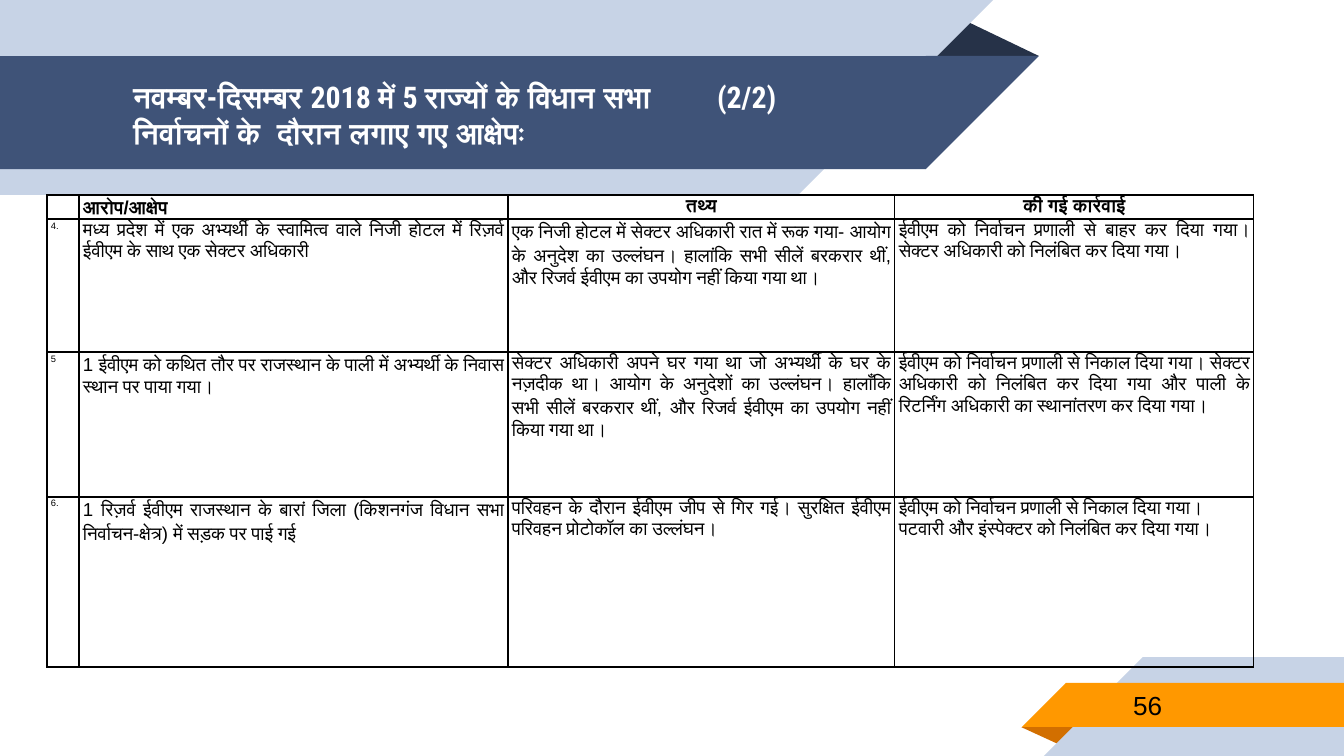
from lxml.etree import SubElement
from pptx import Presentation
from pptx.dml.color import RGBColor
from pptx.enum.shapes import MSO_SHAPE
from pptx.enum.text import MSO_ANCHOR, MSO_AUTO_SIZE, PP_ALIGN
from pptx.oxml.ns import qn
from pptx.util import Pt

SCALE = 914400 / 134.4
PALE, NAVY, SHADE = "C7D3E6", "3F5378", "263248"
ORANGE, RUST = "FF9800", "D26F00"
RECT, CORNER, FOLD = MSO_SHAPE.RECTANGLE, MSO_SHAPE.RIGHT_TRIANGLE, MSO_SHAPE.ISOSCELES_TRIANGLE
LEFT, CENTER, JUSTIFY = PP_ALIGN.LEFT, PP_ALIGN.CENTER, PP_ALIGN.JUSTIFY

TITLE = ("नवम्बर-दिसम्बर 2018 में 5 राज्यों के विधान सभा\t(2/2)\v"
         "निर्वाचनों के  दौरान लगाए गए आक्षेपः")
COLUMNS = [32, 429, 387, 359]
HEIGHTS = [24, 133, 145, 170]
ROWS = [
    ["", "आरोप/आक्षेप", "तथ्य", "की गई कार्रवाई"],
    ["4.",
     "मध्य प्रदेश में एक अभ्यर्थी के स्वामित्व वाले निजी होटल में रिज़र्व ईवीएम के साथ एक सेक्टर अधिकारी",
     "एक निजी होटल में सेक्टर अधिकारी रात में रूक गया- आयोग के अनुदेश का उल्लंघन। "
     "हालांकि सभी सीलें बरकरार थीं, और रिजर्व ईवीएम का उपयोग नहीं किया गया था।",
     "ईवीएम को निर्वाचन प्रणाली से बाहर कर दिया गया। सेक्टर अधिकारी को निलंबित कर दिया गया।"],
    ["5",
     "1 ईवीएम को कथित तौर पर राजस्थान के पाली में अभ्यर्थी के निवास स्थान पर पाया गया।",
     "सेक्टर अधिकारी अपने घर गया था जो अभ्यर्थी के घर के नज़दीक था। आयोग के अनुदेशों का उल्लंघन। "
     "हालाँकि सभी सीलें बरकरार थीं, और रिजर्व ईवीएम का उपयोग नहीं किया गया था।",
     "ईवीएम को निर्वाचन प्रणाली से निकाल दिया गया। सेक्टर अधिकारी को निलंबित कर दिया गया "
     "और पाली के रिटर्निंग अधिकारी का स्थानांतरण कर दिया गया।"],
    ["6.",
     "1 रिज़र्व ईवीएम राजस्थान के बारां जिला (किशनगंज विधान सभा निर्वाचन-क्षेत्र) में सड़क पर पाई गई",
     "परिवहन के दौरान ईवीएम जीप से गिर गई। सुरक्षित ईवीएम परिवहन प्रोटोकॉल का उल्लंघन।",
     "ईवीएम को निर्वाचन प्रणाली से निकाल दिया गया। पटवारी और इंस्पेक्टर को निलंबित कर दिया गया।"],
]
ALIGNS = [[LEFT, LEFT, CENTER, CENTER]] + [[LEFT, JUSTIFY, JUSTIFY, JUSTIFY]] * 2 + [
    [LEFT, JUSTIFY, JUSTIFY, LEFT]]


def px(n):
    """Turn pixels into EMU."""
    return round(n * SCALE)


def color(value):
    """Turn a hex string into a colour."""
    return RGBColor.from_string(value)


def apply(target, values):
    """Set every attribute named in values on target."""
    for name, value in values.items():
        setattr(target, name, value)


class Deck:
    """Hold the style and the current slide."""

    BODY = {"name": "Arial", "size": Pt(10), "bold": False}
    HEAD = {"name": "Roboto Condensed", "size": Pt(16), "bold": True}
    FRAME = {"word_wrap": True, "auto_size": MSO_AUTO_SIZE.NONE, "vertical_anchor": MSO_ANCHOR.MIDDLE,
             **{f"margin_{side}": px(13) for side in ("left", "right", "top", "bottom")}}
    CELL = {"margin_left": px(4), "margin_right": px(4), "margin_top": 0, "margin_bottom": 0}

    def __init__(self):
        """Start a title-only slide."""
        self.prs = Presentation()
        apply(self.prs, {"slide_width": px(1344), "slide_height": px(756)})
        self.s = self.prs.slides.add_slide(self.prs.slide_layouts[5])

    def shape(self, kind, box, fill, turn=0, flip=False):
        """Add a plain filled shape."""
        sp = self.s.shapes.add_shape(kind, *map(px, box))
        sp.shadow.inherit = False
        sp.fill.solid()
        sp.fill.fore_color.rgb = color(fill)
        sp.line.fill.background()
        sp.rotation = turn
        if flip:
            sp._element.spPr.xfrm.set("flipH", "1")
        if kind == FOLD:
            sp.adjustments[0] = 0.324

    def paragraph(self, p, text, font, hue="000000", **layout):
        """Put formatted text into a paragraph."""
        apply(p, layout)
        p.text = text
        for r in p.runs:
            apply(r.font, font)
            r.font.color.rgb = color(hue)

    def title(self, text, box, tab):
        """Place the title, with a tab stop for its page mark."""
        sp = self.s.shapes.title
        apply(sp, dict(zip(("left", "top", "width", "height"), map(px, box))))
        tf = sp.text_frame
        apply(tf, self.FRAME)
        p = tf.paragraphs[0]
        self.paragraph(p, text, self.HEAD, "FFFFFF", alignment=LEFT)
        tabs = SubElement(p._p.get_or_add_pPr(), qn("a:tabLst"))
        SubElement(tabs, qn("a:tab"), pos=str(px(tab)), algn="l")
        self.s.shapes._spTree.append(sp._element)

    def text(self, text, box, size):
        """Add a one-line text box."""
        tf = self.s.shapes.add_textbox(*map(px, box)).text_frame
        apply(tf, self.FRAME)
        self.paragraph(tf.paragraphs[0], text, {**self.BODY, "size": Pt(size)})

    def border(self, cell):
        """Draw a thin black line on each side of a cell."""
        tcPr = cell._tc.get_or_add_tcPr()
        for i, side in enumerate(("lnL", "lnR", "lnT", "lnB")):
            ln = tcPr.makeelement(qn(f"a:{side}"), {"w": str(Pt(0.75))})
            SubElement(SubElement(ln, qn("a:solidFill")), qn("a:srgbClr"), val="000000")
            tcPr.insert(i, ln)

    def table(self, left, top):
        """Add the table of objections."""
        size = sum(COLUMNS), sum(HEIGHTS)
        table = self.s.shapes.add_table(len(ROWS), len(COLUMNS), *map(px, (left, top, *size))).table
        apply(table, {"first_row": False, "horz_banding": False})
        for column, width in zip(table.columns, COLUMNS):
            column.width = px(width)
        for i, (row, height) in enumerate(zip(table.rows, HEIGHTS)):
            row.height = px(height)
            for j, cell in enumerate(row.cells):
                apply(cell, self.CELL)
                cell.fill.background()
                self.border(cell)
                p = cell.text_frame.paragraphs[0]
                font = {**self.BODY, "size": Pt(10 if j else 5), "bold": i == 0}
                self.paragraph(p, ROWS[i][j], font, alignment=ALIGNS[i][j], line_spacing=1.15)
                if not ROWS[i][j]:
                    p._p.get_or_add_endParaRPr().set("sz", "500")


def main():
    """Build and save the slide."""
    deck = Deck()
    deck.shape(FOLD, (925, 19, 114, 37), SHADE)
    for top, width, height, fill in ((0, 798, 195, PALE), (56, 926, 113, NAVY)):
        deck.shape(RECT, (0, top, width, height), fill, 180, True)
        deck.shape(CORNER, (width, top, height, height), fill, 180, True)
    deck.shape(FOLD, (1021, 727, 58, 18), RUST, 180)
    for left, top, height, fill in ((1143, 657, 99, PALE), (1066, 683, 44, ORANGE)):
        deck.shape(RECT, (left, top, 1344 - left, height), fill, flip=True)
        deck.shape(CORNER, (left - height, top, height, height), fill, flip=True)
    deck.title(TITLE, (120, 58, 965, 113), 584)
    deck.text("56", (1120, 682, 219, 47), 14)
    deck.table(47, 195)
    deck.prs.save("out.pptx")


if __name__ == "__main__":
    main()
